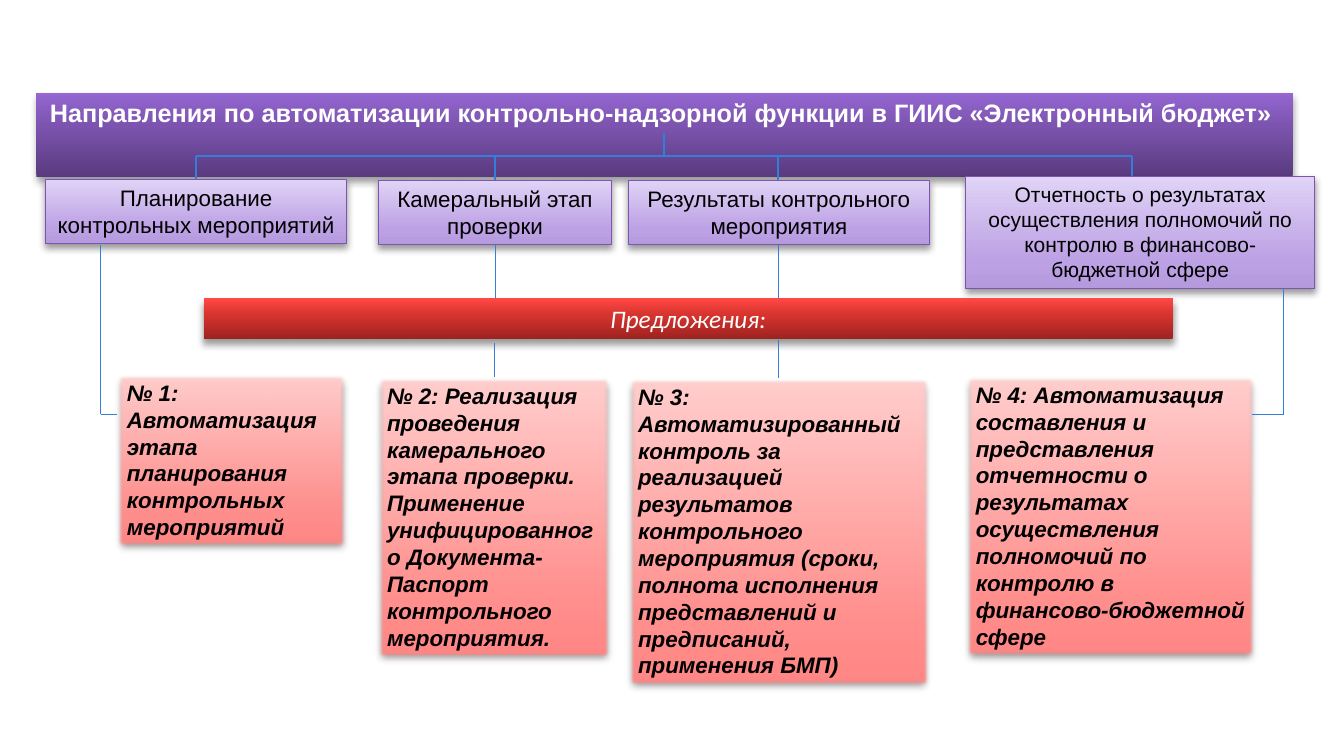
from copy import deepcopy
from lxml.etree import SubElement
from pptx import Presentation
from pptx.dml.color import RGBColor
from pptx.enum.shapes import MSO_CONNECTOR as CONNECTOR, MSO_SHAPE as SHAPE
from pptx.enum.text import MSO_ANCHOR as ANCHOR, MSO_AUTO_SIZE as AUTO_SIZE, PP_ALIGN as ALIGN
from pptx.oxml.ns import qn
from pptx.util import Inches, Pt

WHITE = RGBColor(0xFF, 0xFF, 0xFF)
BLACK = RGBColor(0x00, 0x00, 0x00)
BLUE = RGBColor(0x33, 0x7E, 0xD9)
PURPLE = RGBColor(0x7E, 0x54, 0xB2)
DARK_PURPLES = [(0, RGBColor(0x59, 0x3B, 0x7F)), (0.6, RGBColor(0x7C, 0x53, 0xAE)), (1, RGBColor(0x94, 0x67, 0xD2))]
LILACS = [(0, RGBColor(0xB5, 0x9A, 0xDE)), (0.25, RGBColor(0xBC, 0xA1, 0xE4)), (1, RGBColor(0xE0, 0xD3, 0xF6))]
REDS = [(0, RGBColor(0x9E, 0x23, 0x20)), (0.6, RGBColor(0xD8, 0x34, 0x2F)), (1, RGBColor(0xFF, 0x49, 0x45))]
PINKS = [(0, RGBColor(0xFF, 0x85, 0x83)), (0.25, RGBColor(0xFF, 0x91, 0x8F)), (1, RGBColor(0xFF, 0xCF, 0xCE))]


def style_box(box, place, text, gradient, size, color, align=ALIGN.CENTER,
              font="Arial", bold=False, italic=False, border=None, wrap=True):
    box.left, box.top, box.width, box.height = [Inches(length) for length in place]
    box.fill.gradient()
    box.fill.gradient_angle = 90
    stop_list = box.element.spPr.find(qn("a:gradFill")).find(qn("a:gsLst"))
    stop_list.append(deepcopy(stop_list[-1]))
    for stop, (position, shade) in zip(box.fill.gradient_stops, gradient):
        stop.position = position
        stop.color.rgb = shade
    if border:
        box.line.color.rgb = border
        box.line.width = Pt(0.75)
    else:
        box.line.fill.background()
    box.shadow.inherit = False
    effects = box.element.spPr.find(qn("a:effectLst"))
    shadow = SubElement(effects, qn("a:outerShdw"), blurRad=str(Pt(5.2)), dist=str(Pt(3)),
                        dir="5400000", rotWithShape="0")
    shadow_color = SubElement(shadow, qn("a:srgbClr"), val=str(BLACK))
    SubElement(shadow_color, qn("a:alpha"), val="40000")
    frame = box.text_frame
    frame.text = text
    frame.word_wrap = wrap
    frame.auto_size = AUTO_SIZE.SHAPE_TO_FIT_TEXT
    frame.vertical_anchor = ANCHOR.TOP
    for paragraph in frame.paragraphs:
        paragraph.alignment = align
        paragraph.font.name = font
        paragraph.font.size = Pt(size)
        paragraph.font.bold = bold
        paragraph.font.italic = italic
        paragraph.font.color.rgb = color
    return effects


def add_link(x1, y1, x2, y2, width):
    link = slide.shapes.add_connector(CONNECTOR.STRAIGHT, Inches(x1), Inches(y1), Inches(x2), Inches(y2))
    link.line.color.rgb = BLUE
    link.line.width = Pt(width)
    SubElement(link.element.spPr, qn("a:effectLst"))


prs = Presentation()
prs.slide_width = Inches(13.33)
prs.slide_height = Inches(7.5)
slide = prs.slides.add_slide(prs.slide_layouts[5])

style_box(slide.shapes.title, (0.36, 0.92, 12.46, 0.4),
          "Направления по автоматизации контрольно-надзорной функции в ГИИС «Электронный бюджет» ",
          DARK_PURPLES, 18, WHITE, bold=True, wrap=False)

directions = [
    ((0.45, 1.78, 2.99, 0.64), 16, "Планирование\nконтрольных мероприятий"),
    ((3.75, 1.79, 2.32, 0.64), 16, "Камеральный этап проверки"),
    ((6.23, 1.79, 2.99, 0.64), 16, "Результаты контрольного мероприятия"),
    ((9.58, 1.75, 3.46, 1.11), 15,
     "Отчетность о результатах осуществления полномочий по контролю в финансово-\nбюджетной сфере"),
]
for place, size, text in directions:
    direction = slide.shapes.add_shape(SHAPE.RECTANGLE, 0, 0, 0, 0)
    style_box(direction, place, text, LILACS, size, BLACK, border=PURPLE)

trunk_y = 1.55
add_link(6.59, 1.32, 6.59, trunk_y, 1.5)
add_link(1.94, trunk_y, 11.23, trunk_y, 1.5)
for x, bottom in [(1.94, 1.78), (4.91, 1.79), (7.72, 1.79), (11.23, 1.75)]:
    add_link(x, trunk_y, x, bottom, 1.5)

proposals_band = slide.shapes.add_shape(SHAPE.RECTANGLE, 0, 0, 0, 0)
style_box(proposals_band, (2.02, 2.96, 9.61, 0.4), "Предложения:", REDS, 18, WHITE,
          font="Calibri", italic=True)

proposals = [
    ((1.16, 3.71, 2.28, 1.72), "№ 1: Автоматизация этапа планирования контрольных мероприятий"),
    ((3.74, 3.74, 2.32, 2.79),
     "№ 2: Реализация проведения камерального\n"
     "этапа проверки. Применение унифицированного Документа- Паспорт контрольного мероприятия."),
    ((6.23, 3.75, 2.99, 3.06),
     "№ 3: Автоматизированный контроль за реализацией результатов контрольного мероприятия "
     "(сроки, полнота исполнения представлений и предписаний, применения БМП)"),
    ((9.58, 3.73, 2.87, 2.79),
     "№ 4: Автоматизация составления и представления отчетности о результатах осуществления "
     "полномочий по контролю в финансово-бюджетной сфере"),
]
for place, text in proposals:
    proposal = slide.shapes.add_shape(SHAPE.RECTANGLE, 0, 0, 0, 0)
    effects = style_box(proposal, place, text, PINKS, 16, BLACK, align=ALIGN.LEFT, bold=True, italic=True)
    SubElement(effects, qn("a:softEdge"), rad=str(Pt(2.5)))

proposal_links = [
    (1, 2.43, 1, 4.11), (1, 4.11, 1.16, 4.11),
    (4.91, 2.43, 4.91, 2.96), (4.9, 3.4, 4.9, 3.74),
    (7.72, 2.43, 7.72, 2.96), (7.72, 3.37, 7.72, 3.75),
    (12.73, 2.86, 12.73, 4.11), (12.73, 4.11, 12.42, 4.11),
]
for ends in proposal_links:
    add_link(*ends, 0.75)

prs.save("out.pptx")
